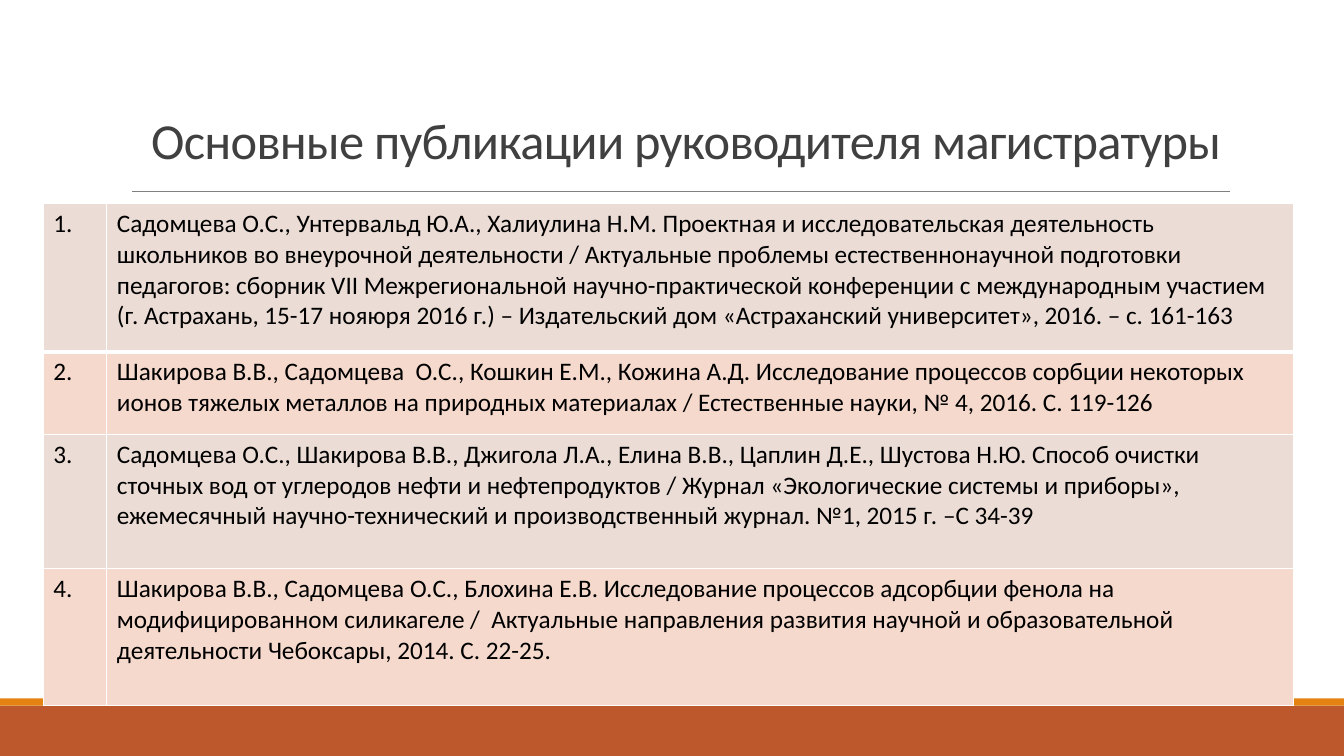
"""Build a slide listing the main publications of the master's programme head."""
from dataclasses import dataclass

import lxml.etree
import pptx
import pptx.dml.color
import pptx.enum.shapes
import pptx.enum.text
import pptx.oxml.ns
import pptx.util

Inches = pptx.util.Inches
Pt = pptx.util.Pt
qn = pptx.oxml.ns.qn


@dataclass(frozen=True)
class Theme:
    font: str = "Calibri"
    title_size: int = 36
    body_size: int = 18
    title: str = "404040"
    text: str = "000000"
    rule: str = "808080"
    border: str = "FFFFFF"
    footer: str = "BD582C"
    stripe: str = "E48312"
    bands: tuple = ("EBDCD5", "F5D9CC")


theme = Theme()


def rgb(value):
    return pptx.dml.color.RGBColor.from_string(value)


def set_font(paragraph, size, color):
    paragraph.font.name = theme.font
    paragraph.font.size = Pt(size)
    paragraph.font.color.rgb = rgb(color)


publications = [
    (1.47, "Садомцева О.С., Унтервальд Ю.А., Халиулина Н.М. Проектная и исследовательская деятельность "
           "школьников во внеурочной деятельности / Актуальные проблемы естественнонаучной подготовки "
           "педагогов: сборник VII Межрегиональной научно-практической конференции с международным участием "
           "(г. Астрахань, 15-17 нояюря 2016 г.) – Издательский дом «Астраханский университет», 2016. – с. 161-163"),
    (0.82, "Шакирова В.В., Садомцева  О.С., Кошкин Е.М., Кожина А.Д. Исследование процессов сорбции некоторых "
           "ионов тяжелых металлов на природных материалах / Естественные науки, № 4, 2016. С. 119-126"),
    (1.33, "Садомцева О.С., Шакирова В.В., Джигола Л.А., Елина В.В., Цаплин Д.Е., Шустова Н.Ю. Способ очистки "
           "сточных вод от углеродов нефти и нефтепродуктов / Журнал «Экологические системы и приборы», "
           "ежемесячный научно-технический и производственный журнал. №1, 2015 г. –С 34-39"),
    (1.36, "Шакирова В.В., Садомцева О.С., Блохина Е.В. Исследование процессов адсорбции фенола на "
           "модифицированном силикагеле /  Актуальные направления развития научной и образовательной "
           "деятельности Чебоксары, 2014. С. 22-25."),
]

presentation = pptx.Presentation()
presentation.slide_width = Inches(13.33)
presentation.slide_height = Inches(7.5)
slide = presentation.slides.add_slide(presentation.slide_layouts[5])

for top, height, color in [(7, 0.5, theme.footer), (6.93, 0.07, theme.stripe)]:
    bar = slide.shapes.add_shape(
        pptx.enum.shapes.MSO_SHAPE.RECTANGLE, 0, Inches(top), presentation.slide_width, Inches(height))
    bar.shadow.inherit = False
    bar.fill.solid()
    bar.fill.fore_color.rgb = rgb(color)
    bar.line.fill.background()

title_rule = slide.shapes.add_connector(
    pptx.enum.shapes.MSO_CONNECTOR.STRAIGHT, Inches(1.31), Inches(1.9), Inches(12.2), Inches(1.9))
title_rule.line.color.rgb = rgb(theme.rule)
title_rule.line.width = Pt(0.5)
lxml.etree.SubElement(title_rule._element.spPr, qn("a:effectLst"))

title = slide.shapes.title
title.left, title.top, title.width, title.height = map(Inches, (0.98, 0.8, 11.65, 0.93))
title.text_frame.text = "Основные публикации руководителя магистратуры"
title.text_frame.word_wrap = True
title.text_frame.auto_size = pptx.enum.text.MSO_AUTO_SIZE.NONE
title.text_frame.vertical_anchor = pptx.enum.text.MSO_ANCHOR.BOTTOM
title_paragraph = title.text_frame.paragraphs[0]
title_paragraph.alignment = pptx.enum.text.PP_ALIGN.CENTER
title_paragraph.line_spacing = 0.85
set_font(title_paragraph, theme.title_size, theme.title)
title_paragraph.runs[0]._r.get_or_add_rPr().set("spc", "-50")

table_height = sum(height for height, _ in publications)
table = slide.shapes.add_table(
    len(publications), 2, Inches(0.43), Inches(2.02), Inches(12.4), Inches(table_height)).table
table.first_row = False
table.horz_banding = False
table.columns[0].width = Inches(0.63)
table.columns[1].width = Inches(11.77)

for row, (height, publication) in enumerate(publications):
    table.rows[row].height = Inches(height)
    border_widths = {"L": 1, "R": 1, "T": 3 if row == 1 else 1, "B": 3 if row == 0 else 1}
    for column, text in enumerate((f"{row + 1}.", publication)):
        cell = table.cell(row, column)
        cell.text = text
        set_font(cell.text_frame.paragraphs[0], theme.body_size, theme.text)
        properties = cell._tc.get_or_add_tcPr()
        for side, width in border_widths.items():
            border = lxml.etree.SubElement(properties, qn(f"a:ln{side}"), w=str(Pt(width)))
            border_fill = lxml.etree.SubElement(border, qn("a:solidFill"))
            lxml.etree.SubElement(border_fill, qn("a:srgbClr"), val=theme.border)
        cell.fill.solid()
        cell.fill.fore_color.rgb = rgb(theme.bands[row % 2])

presentation.save("out.pptx")
